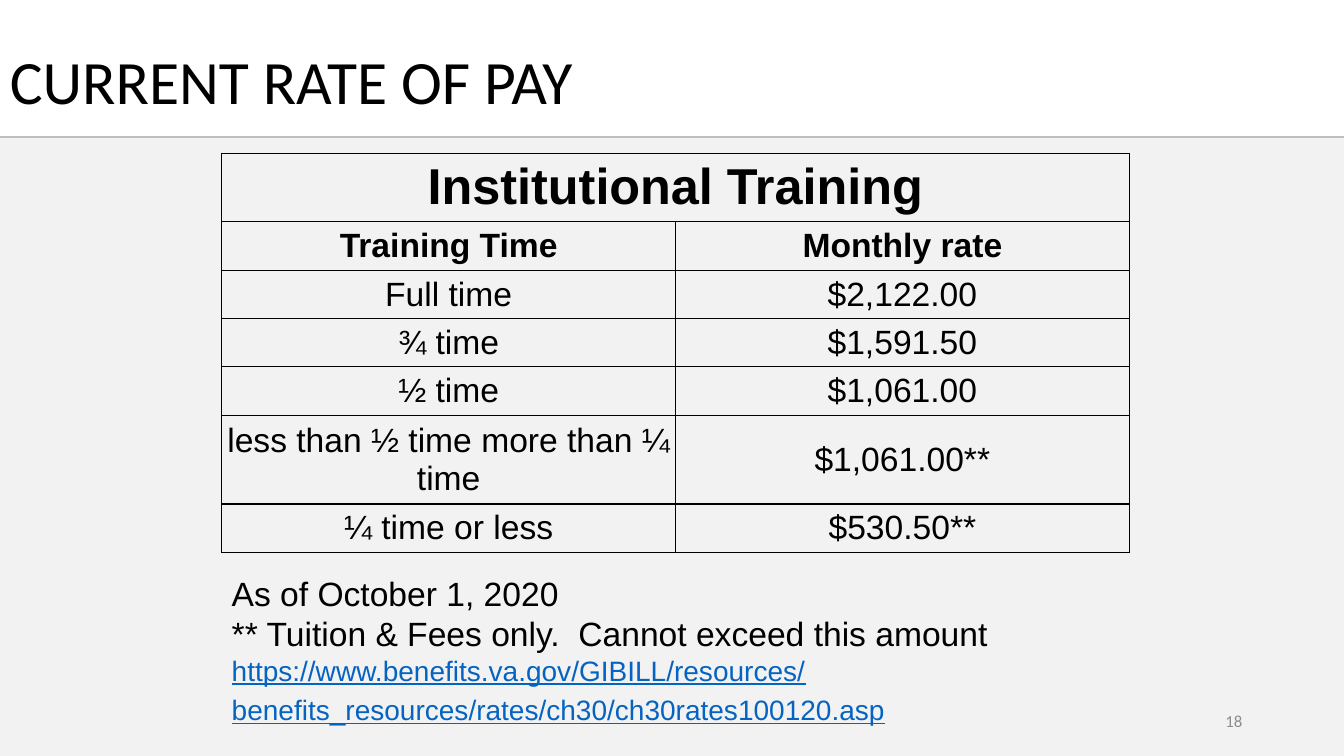
from lxml import etree
from pptx import Presentation, util as u
from pptx.dml.color import RGBColor
from pptx.enum import shapes, text
from pptx.oxml.ns import qn

HUES = {"ink": "000000", "panel": "F2F2F2", "rule": "BFBFBF",
        "page": "8C8C8C", "link": "0563C1"}
RATES = [
    ("Institutional Training", ""),
    ("Training Time", "Monthly rate"),
    ("Full time", "$2,122.00"),
    ("¾ time", "$1,591.50"),
    ("½ time", "$1,061.00"),
    ("less than ½ time more than ¼ time", "$1,061.00**"),
    ("¼ time or less", "$530.50**"),
]
LINK = ("https://www.benefits.va.gov/GIBILL/resources/"
        "benefits_resources/rates/ch30/ch30rates100120.asp")


def hue(name):
    return RGBColor.from_string(HUES[name])


def add_run(para, words, size, face="Arial", tint="ink", bold=False, under=False):
    run = para.add_run()
    run.text = words
    font = run.font
    font.size, font.name = u.Pt(size), face
    font.bold, font.underline = bold, under
    font.color.rgb = hue(tint)


def add_box(slide, left, top, width, height, anchor):
    """Add a wrapping text box and return its text frame."""
    box = slide.shapes.add_textbox(*map(u.Inches, (left, top, width, height)))
    frame = box.text_frame
    frame.word_wrap = True
    frame.vertical_anchor = anchor
    return frame


def add_panel(slide, wide):
    panel = slide.shapes.add_shape(shapes.MSO_SHAPE.RECTANGLE, 0, u.Inches(1.37),
                                   wide, u.Inches(6.13))
    panel.shadow.inherit = False
    panel.fill.solid()
    panel.fill.fore_color.rgb = hue("panel")
    panel.line.fill.background()


def add_rule(slide, wide):
    top = u.Inches(1.36)
    rule = slide.shapes.add_connector(shapes.MSO_CONNECTOR.STRAIGHT, 0, top, wide, top)
    rule.line.color.rgb = hue("rule")
    rule.line.width = u.Pt(1.5)
    etree.SubElement(rule._element.spPr, qn("a:effectLst"))


def set_edges(cell):
    """Draw a thin line on all four sides of a cell that has no fill yet."""
    props = cell._tc.get_or_add_tcPr()
    for side in ("lnL", "lnR", "lnT", "lnB"):
        line = etree.SubElement(props, qn(f"a:{side}"), w=str(u.Pt(1)))
        fill = etree.SubElement(line, qn("a:solidFill"))
        etree.SubElement(fill, qn("a:srgbClr"), val=HUES["ink"])


def add_rates(slide):
    row_high = u.Inches(0.46)
    table = slide.shapes.add_table(len(RATES), 2, u.Inches(2.2), u.Inches(1.52),
                                   u.Inches(9), row_high * len(RATES)).table
    table.first_row = table.horz_banding = False
    for r, row in enumerate(RATES):
        table.rows[r].height = row_high
        for c, words in enumerate(row):
            cell = table.cell(r, c)
            set_edges(cell)
            cell.fill.background()
            cell.vertical_anchor = text.MSO_ANCHOR.MIDDLE
            cell.margin_left = cell.margin_right = u.Inches(0.04)
            cell.margin_top = cell.margin_bottom = u.Inches(0.04)
            if words:
                para = cell.text_frame.paragraphs[0]
                para.alignment = text.PP_ALIGN.CENTER
                add_run(para, words, 24 if r else 36, bold=r < 2)
    table.cell(0, 0).merge(table.cell(0, 1))


def add_notes(slide):
    frame = add_box(slide, 2.2, 5.63, 7.96, 1.65, text.MSO_ANCHOR.TOP)
    frame.auto_size = text.MSO_AUTO_SIZE.SHAPE_TO_FIT_TEXT
    add_run(frame.paragraphs[0], "As of October 1, 2020", 24)
    add_run(frame.add_paragraph(),
            "** Tuition & Fees only.  Cannot exceed this amount", 24)
    para = frame.add_paragraph()
    add_run(para, LINK, 20, tint="link", under=True)
    add_run(para, " ", 24)


def main():
    deck = Presentation()
    deck.slide_width, deck.slide_height = u.Inches(13.33), u.Inches(7.5)
    slide = deck.slides.add_slide(deck.slide_layouts[6])
    add_panel(slide, deck.slide_width)
    add_rule(slide, deck.slide_width)

    title = add_box(slide, 0, 0.33, 7.24, 1.01, text.MSO_ANCHOR.MIDDLE).paragraphs[0]
    title.line_spacing = 0.9
    add_run(title, "CURRENT RATE OF PAY", 44, "Calibri")

    add_rates(slide)
    page = add_box(slide, 9.42, 6.95, 3, 0.4, text.MSO_ANCHOR.MIDDLE).paragraphs[0]
    page.alignment = text.PP_ALIGN.RIGHT
    add_run(page, "18", 12, "Calibri", "page")
    add_notes(slide)
    deck.save("out.pptx")


if __name__ == "__main__":
    main()
